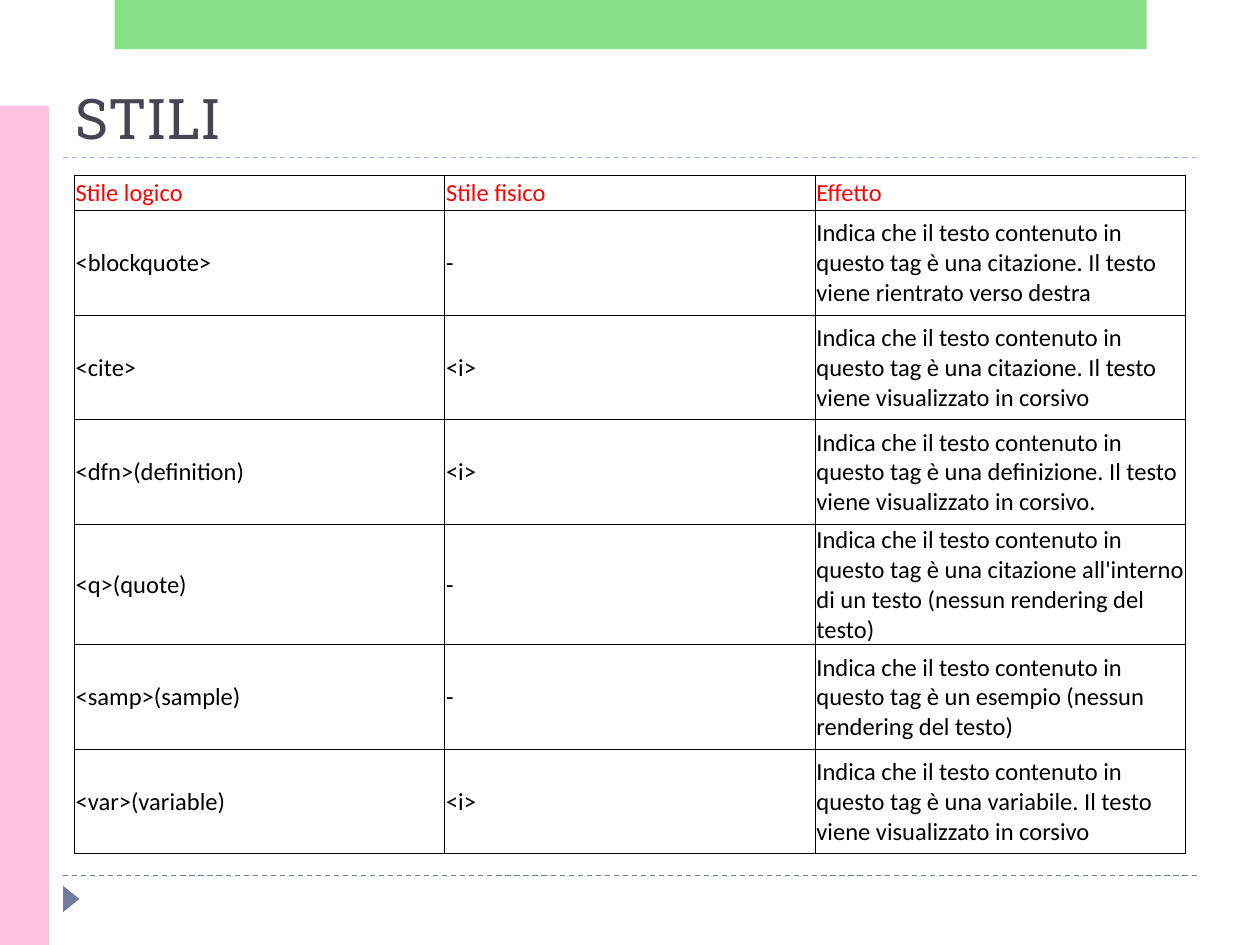
from lxml.etree import SubElement as Sub
from pptx import Presentation
from pptx.dml.color import RGBColor
from pptx.enum.dml import MSO_LINE
from pptx.enum.shapes import MSO_CONNECTOR, MSO_SHAPE
from pptx.enum.text import MSO_ANCHOR, MSO_AUTO_SIZE, PP_ALIGN
from pptx.oxml.ns import qn
from pptx.util import Inches, Pt

# Content
TITLE = "STILI"
HEAD = ("Stile logico", "Stile fisico", "Effetto")
TAG = "Indica che il testo contenuto in questo tag è "
ROWS = [
    ("<blockquote>", "-", TAG + "una citazione. Il testo viene rientrato verso destra"),
    ("<cite>", "<i>", TAG + "una citazione. Il testo viene visualizzato in corsivo"),
    ("<dfn>(definition)", "<i>", TAG + "una definizione. Il testo viene visualizzato in corsivo."),
    ("<q>(quote)", "-", TAG + "una citazione all'interno di un testo (nessun rendering del testo)"),
    ("<samp>(sample)", "-", TAG + "un esempio (nessun rendering del testo)"),
    ("<var>(variable)", "<i>", TAG + "una variabile. Il testo viene visualizzato in corsivo"),
]
RULES = [(6.95, "727CA3"), (1.25, "9FB8CD")]
# shape, place, colour, opacity in percent, rotation
DECOR = [
    (MSO_SHAPE.ISOSCELES_TRIANGLE, (0.46, 7.07, 0.21, 0.13), "727CA3", 100, 90),
    (MSO_SHAPE.RECTANGLE, (0, 0.84, 0.39, 6.66), "FFC1E0", 100, 0),
    (MSO_SHAPE.RECTANGLE, (0.91, 0, 8.19, 0.39), "62D862", 76, 0),
]
LEFT, TOP, COL = 0.59, 1.39, 2.94
HEAD_H, ROW_H = 0.28, 0.83


def paint(color, code):
    color.rgb = RGBColor.from_string(code)


def style(par, font, size, code):
    par.font.name, par.font.size = font, Pt(size)
    paint(par.font.color, code)


def add_rule(slide, y, code):
    rule = slide.shapes.add_connector(
        MSO_CONNECTOR.STRAIGHT, Inches(0.5), Inches(y), Inches(9.5), Inches(y))
    paint(rule.line.color, code)
    rule.line.width = Pt(0.75)
    rule.line.dash_style = MSO_LINE.DASH
    Sub(rule._element.spPr, qn("a:effectLst"))


def add_decor(slide, kind, place, code, alpha, turn):
    shape = slide.shapes.add_shape(kind, *map(Inches, place))
    shape.shadow.inherit = False
    shape.rotation = turn
    shape.line.fill.background()
    shape.fill.solid()
    paint(shape.fill.fore_color, code)
    if alpha < 100:
        tone = shape._element.spPr.find(".//" + qn("a:srgbClr"))
        Sub(tone, qn("a:alpha"), val=str(alpha * 1000))


def add_edges(cell):
    props = cell._tc.get_or_add_tcPr()
    for i, side in enumerate(("lnL", "lnR", "lnT", "lnB")):
        edge = props.makeelement(qn("a:" + side), {"w": str(Pt(0.5))})
        Sub(Sub(edge, qn("a:solidFill")), qn("a:srgbClr"), val="000000")
        props.insert(i, edge)


def fill_cell(cell, text, code):
    cell.text_frame.text = text
    cell.vertical_anchor = MSO_ANCHOR.MIDDLE
    cell.margin_left = cell.margin_right = cell.margin_top = Inches(0.01)
    cell.margin_bottom = 0
    cell.fill.background()
    add_edges(cell)
    style(cell.text_frame.paragraphs[0], "Calibri", 14, code)


def main():
    deck = Presentation()
    deck.slide_width, deck.slide_height = Inches(10), Inches(7.5)
    slide = deck.slides.add_slide(deck.slide_layouts[5])

    # Rules and side bars
    for y, code in RULES:
        add_rule(slide, y, code)
    for item in DECOR:
        add_decor(slide, *item)

    # Title
    title = slide.shapes.title
    title.left, title.top, title.width, title.height = map(Inches, (0.5, 0.55, 9, 0.7))
    frame = title.text_frame
    frame.text = TITLE
    frame.auto_size = MSO_AUTO_SIZE.NONE
    frame.vertical_anchor = MSO_ANCHOR.BOTTOM
    par = frame.paragraphs[0]
    par.alignment = PP_ALIGN.LEFT
    style(par, "Roboto Slab", 32, "464653")

    # Table
    data = [HEAD] + ROWS
    high = HEAD_H + ROW_H * len(ROWS)
    table = slide.shapes.add_table(
        len(data), len(HEAD), Inches(LEFT), Inches(TOP),
        Inches(COL * len(HEAD)), Inches(high)).table
    table.first_row = table.horz_banding = False
    for col in table.columns:
        col.width = Inches(COL)
    for r, texts in enumerate(data):
        table.rows[r].height = Inches(ROW_H if r else HEAD_H)
        for c, text in enumerate(texts):
            fill_cell(table.cell(r, c), text, "000000" if r else "FF0000")

    deck.save("out.pptx")


if __name__ == "__main__":
    main()
